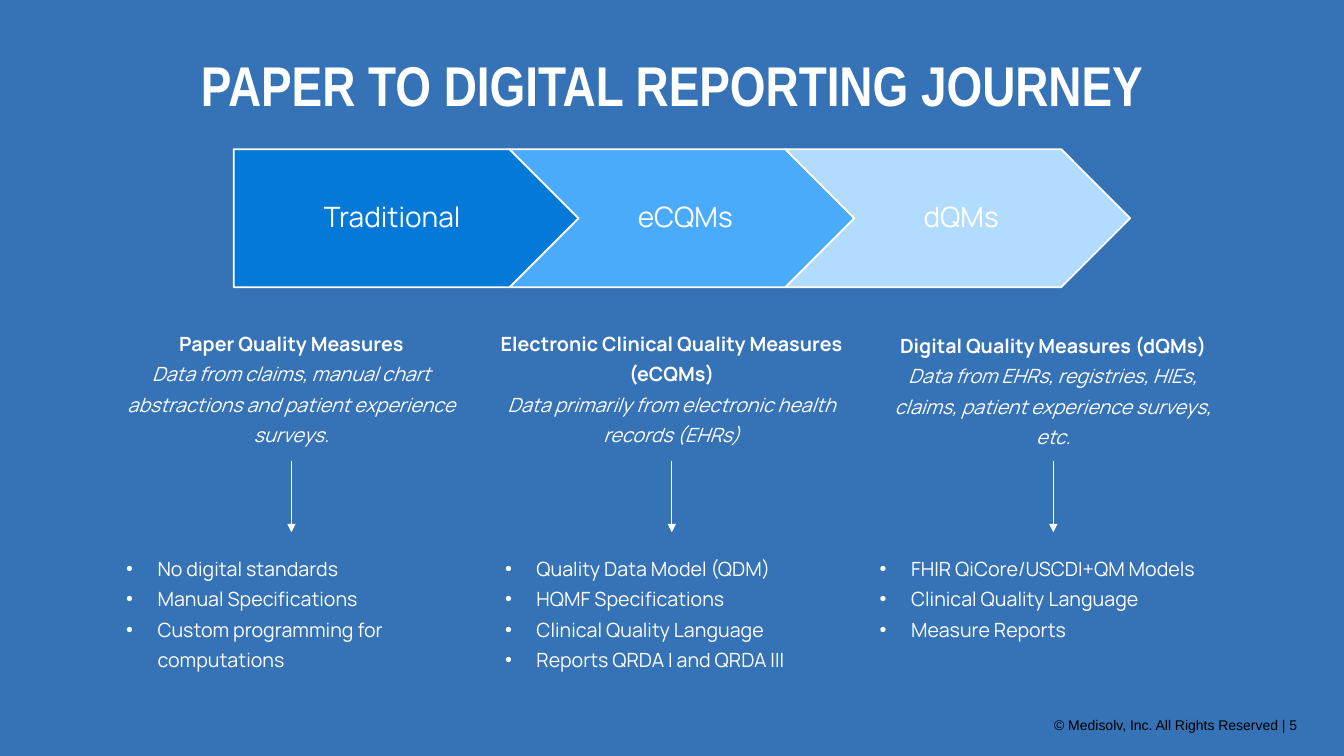
from dataclasses import dataclass

from lxml.etree import SubElement
from pptx import Presentation
from pptx.dml.color import RGBColor
from pptx.enum.shapes import MSO_CONNECTOR as Connector, MSO_SHAPE as Shape
from pptx.enum.text import MSO_ANCHOR as Anchor, MSO_AUTO_SIZE as AutoSize, PP_ALIGN as Align
from pptx.oxml.ns import qn
from pptx.util import Cm, Pt

# Content
TITLE = "PAPER TO DIGITAL REPORTING JOURNEY"
FOOTER = "© Medisolv, Inc. All Rights Reserved | 5"
STAGES = [
    {
        "name": "Traditional", "shape": Shape.PENTAGON, "fill": "0579D8",
        "heading": "Paper Quality Measures",
        "source": "Data from claims, manual chart abstractions and patient experience surveys.",
        "points": ["No digital standards", "Manual Specifications",
                   "Custom programming for computations"],
        "summary_at": (3.18, 8.05, 8.33), "list_at": (3.18, 8.33),
    },
    {
        "name": "eCQMs", "shape": Shape.CHEVRON, "fill": "4AABFD",
        "heading": "Electronic Clinical Quality Measures (eCQMs)",
        "source": "Data primarily from electronic health records (EHRs)",
        "points": ["Quality Data Model (QDM)", "HQMF Specifications",
                   "Clinical Quality Language", "Reports QRDA I and QRDA III"],
        "summary_at": (12.47, 8.05, 8.92), "list_at": (12.73, 8.33),
    },
    {
        "name": "dQMs", "shape": Shape.CHEVRON, "fill": "B1DBFF",
        "heading": "Digital Quality Measures (dQMs)",
        "source": "Data from EHRs, registries, HIEs, claims, patient experience surveys, etc.",
        "points": ["FHIR QiCore/USCDI+QM Models", "Clinical Quality Language",
                   "Measure Reports"],
        "summary_at": (22.38, 8.1, 8.33), "list_at": (22.17, 9.02),
    },
]


@dataclass(frozen=True)
class Theme:
    background: str = "3572B6"
    light: str = "FFFFFF"
    dark: str = "000000"
    title_font: str = "Arial Narrow"
    body_font: str = "Manrope"
    footer_font: str = "Arial"
    title_size: int = 40
    stage_size: int = 20
    body_size: int = 14
    footer_size: int = 10


THEME = Theme()

# Layout in centimetres
SLIDE_W, SLIDE_H = 33.87, 19.05
STAGE_LEFT, STAGE_TOP, STAGE_W, STAGE_H = 5.89, 3.76, 8.69, 3.48
STAGE_STEP = 0.8 * STAGE_W
SUMMARY_H = 3.4
ARROW_TOP, ARROW_BOTTOM = 11.61, 13.41
LIST_TOP, LIST_H = 13.72, 3.33
BULLET_INDENT = 0.79


def place(shape, left, top, width, height):
    shape.left, shape.top, shape.width, shape.height = map(Cm, (left, top, width, height))


def prepare(shape, side=0.0, edge=0.13, anchor=Anchor.TOP):
    frame = shape.text_frame
    frame.word_wrap = True
    frame.auto_size = AutoSize.NONE
    frame.vertical_anchor = anchor
    frame.margin_left = frame.margin_right = Cm(side)
    frame.margin_top = frame.margin_bottom = Cm(edge)
    return frame


def add_para(frame, index, text, size, font=THEME.body_font, color=THEME.light,
             align=Align.CENTER, spacing=1.0, bold=False, italic=False):
    para = frame.add_paragraph() if index else frame.paragraphs[0]
    para.alignment = align
    para.line_spacing = spacing
    para.space_before = Pt(0)
    span = para.add_run()
    span.text = text
    span.font.name, span.font.size = font, Pt(size)
    span.font.bold, span.font.italic = bold, italic
    span.font.color.rgb = RGBColor.from_string(color)
    return para


def add_bullet(para):
    props = para._p.get_or_add_pPr()
    props.set("marL", str(Cm(BULLET_INDENT)))
    props.set("indent", str(-Cm(BULLET_INDENT)))
    SubElement(props, qn("a:buFont")).set("typeface", "Arial")
    SubElement(props, qn("a:buChar")).set("char", "•")


def add_stage(page, number, stage):
    shape = page.shapes.add_shape(
        stage["shape"], Cm(STAGE_LEFT + number * STAGE_STEP), Cm(STAGE_TOP),
        Cm(STAGE_W), Cm(STAGE_H))
    shape.shadow.inherit = False
    shape.fill.solid()
    shape.fill.fore_color.rgb = RGBColor.from_string(stage["fill"])
    shape.line.color.rgb = RGBColor.from_string(THEME.light)
    shape.line.width = Pt(1.25)
    frame = prepare(shape, anchor=Anchor.MIDDLE)
    frame.margin_left, frame.margin_right = Cm(0.25), Cm(0.08)
    add_para(frame, 0, stage["name"], THEME.stage_size, spacing=0.9)


def add_summary(page, stage):
    left, top, width = stage["summary_at"]
    box = page.shapes.add_textbox(Cm(left), Cm(top), Cm(width), Cm(SUMMARY_H))
    frame = prepare(box)
    add_para(frame, 0, stage["heading"], THEME.body_size, spacing=1.3, bold=True)
    add_para(frame, 1, stage["source"], THEME.body_size, spacing=1.3, italic=True)


def add_arrow(page, stage):
    left, _, width = stage["summary_at"]
    center = Cm(left + width / 2)
    arrow = page.shapes.add_connector(
        Connector.STRAIGHT, center, Cm(ARROW_TOP), center, Cm(ARROW_BOTTOM))
    arrow.line.color.rgb = RGBColor.from_string(THEME.light)
    arrow.line.width = Pt(0.75)
    SubElement(arrow.line._get_or_add_ln(), qn("a:tailEnd")).set("type", "triangle")
    SubElement(arrow._element.spPr, qn("a:effectLst"))


def fill_list(body, stage):
    left, width = stage["list_at"]
    place(body, left, LIST_TOP, width, LIST_H)
    frame = prepare(body)
    for index, point in enumerate(stage["points"]):
        para = add_para(frame, index, point, THEME.body_size, align=Align.LEFT, spacing=1.3)
        add_bullet(para)


def main():
    deck = Presentation()
    deck.slide_width, deck.slide_height = Cm(SLIDE_W), Cm(SLIDE_H)
    page = deck.slides.add_slide(deck.slide_layouts.get_by_name("Comparison"))
    page.background.fill.solid()
    page.background.fill.fore_color.rgb = RGBColor.from_string(THEME.background)

    # Title
    title = page.shapes.title
    place(title, 0, 1.14, SLIDE_W, 1.96)
    add_para(prepare(title), 0, TITLE, THEME.title_size, font=THEME.title_font, bold=True)

    # Three stages, each with its summary, arrow and list
    *bodies, spare = [holder for holder in page.placeholders
                      if holder.placeholder_format.idx != 0]
    spare._element.getparent().remove(spare._element)
    for number, (stage, body) in enumerate(zip(STAGES, bodies)):
        add_stage(page, number, stage)
        add_summary(page, stage)
        add_arrow(page, stage)
        fill_list(body, stage)

    # Footer
    footer = page.shapes.add_textbox(Cm(16), Cm(17.93), Cm(16.94), Cm(0.69))
    add_para(prepare(footer, side=0.25), 0, FOOTER, THEME.footer_size,
             font=THEME.footer_font, color=THEME.dark, align=Align.RIGHT)

    deck.save("out.pptx")


if __name__ == "__main__":
    main()
